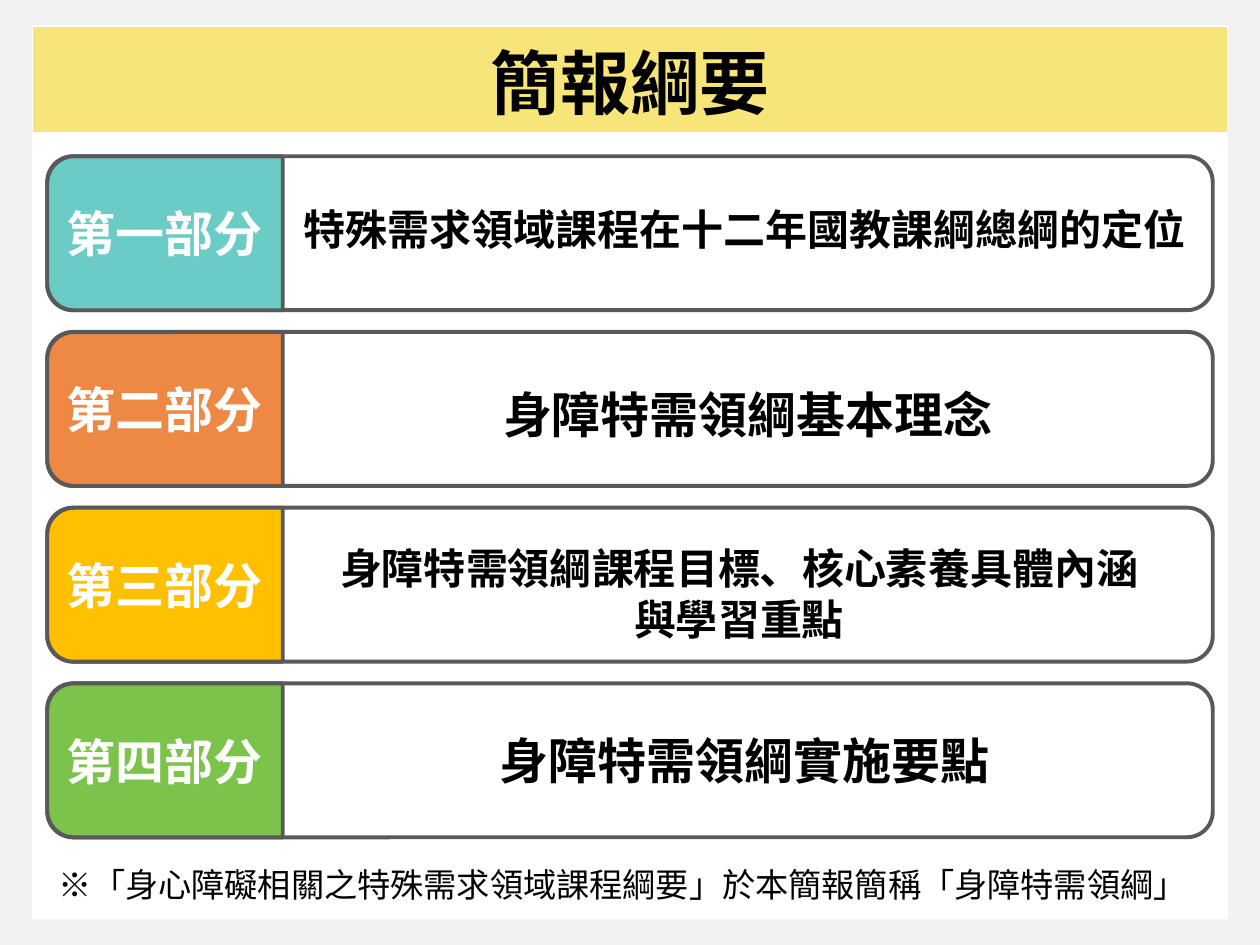
"""Build the briefing outline slide: a title band, four numbered parts and a footnote."""
from dataclasses import dataclass

from lxml import etree
from pptx import Presentation
from pptx.dml.color import RGBColor
from pptx.enum.shapes import MSO_SHAPE
from pptx.enum.text import MSO_ANCHOR, PP_ALIGN
from pptx.oxml.ns import qn
from pptx.util import Pt

ROUNDED = MSO_SHAPE.ROUNDED_RECTANGLE
TAB = MSO_SHAPE.ROUND_2_SAME_RECTANGLE
MIDDLE, TOP = MSO_ANCHOR.MIDDLE, MSO_ANCHOR.TOP
LEFT, CENTER = PP_ALIGN.LEFT, PP_ALIGN.CENTER


@dataclass(frozen=True)
class Theme:
    page: str = "F2F2F2"
    band: str = "F7E579"
    panel: str = "FFFFFF"
    ink: str = "000000"
    label: str = "FFFFFF"
    outline: str = "595959"
    heading_font: str = "Noto Sans CJK SC"
    note_font: str = "Noto Sans CJK TC"
    note_latin: str = "Calibri"
    title_size: int = 40
    large: int = 28
    medium: int = 24
    note_size: int = 19


THEME = Theme()


def add_text(box, lines, size, color, align=CENTER, anchor=TOP, wrap=True):
    left, top, width, height = box
    frame = slide.shapes.add_textbox(Pt(left), Pt(top), Pt(width), Pt(height)).text_frame
    frame.word_wrap = wrap
    frame.vertical_anchor = anchor
    frame.text = "\n".join(lines)
    for paragraph in frame.paragraphs:
        paragraph.alignment = align
        for run in paragraph.runs:
            style_run(run, size, color, THEME.heading_font, THEME.heading_font, True)
    return frame


def style_run(run, size, color, latin, east_asian, bold):
    run.font.size = Pt(size)
    run.font.bold = bold
    run.font.color.rgb = RGBColor.from_string(color)
    run.font.name = latin
    etree.SubElement(run.font._element, qn("a:ea"), typeface=east_asian)


presentation = Presentation()
presentation.slide_width, presentation.slide_height = Pt(720), Pt(540)
slide = presentation.slides.add_slide(presentation.slide_layouts[6])
slide.background.fill.solid()
slide.background.fill.fore_color.rgb = RGBColor.from_string(THEME.page)

backdrop = slide.shapes.add_table(2, 1, Pt(18.7), Pt(15), Pt(682.6), Pt(510)).table
for row, (height, color) in enumerate([(61, THEME.band), (449, THEME.panel)]):
    backdrop.rows[row].height = Pt(height)
    cell = backdrop.cell(row, 0)
    cell.fill.solid()
    cell.fill.fore_color.rgb = RGBColor.from_string(color)

add_text((135.4, 21.6, 449.3, 49.7), ["簡報綱要"], THEME.title_size, THEME.ink, anchor=MIDDLE)

parts = [
    ("第一部分", "6BCBC5", 100, ["特殊需求領域課程在十二年國教課綱總綱的定位"],
     THEME.medium, LEFT, (151.9, 113, 540.7, 36)),
    ("第二部分", "ED7D31", 90, ["身障特需領綱基本理念"],
     THEME.large, CENTER, (162, 216, 530.6, 41)),
    ("第三部分", "FFC000", 100, ["身障特需領綱課程目標、核心素養具體內涵", "與學習重點"],
     THEME.medium, CENTER, (157, 306.7, 530.6, 65.5)),
    ("第四部分", "6DBD37", 90, ["身障特需領綱實施要點"],
     THEME.large, CENTER, (158.4, 414, 534.2, 41)),
]
first_top, row_step, row_height = 89.3, 100.4, 88
row_left, row_width, tab_width = 27, 666, 134.6

for index, (label, color, opacity, topic, size, align, topic_box) in enumerate(parts):
    row_top = first_top + index * row_step
    topic_frame = add_text(topic_box, topic, size, THEME.ink, align)
    if align == LEFT:
        topic_frame.margin_left = Pt(21.6)

    row_frame = slide.shapes.add_shape(
        ROUNDED, Pt(row_left), Pt(row_top), Pt(row_width), Pt(row_height))
    row_frame.fill.background()

    tab = slide.shapes.add_shape(
        TAB, Pt(row_left + (tab_width - row_height) / 2),
        Pt(row_top + (row_height - tab_width) / 2), Pt(row_height), Pt(tab_width))
    tab.rotation = 270
    tab.adjustments[0], tab.adjustments[1] = 0.174, 0
    tab.fill.solid()
    tab.fill.fore_color.rgb = RGBColor.from_string(color)
    if opacity < 100:
        tab_color = tab._element.spPr.find(qn("a:solidFill")).find(qn("a:srgbClr"))
        etree.SubElement(tab_color, qn("a:alpha"), val=str(opacity * 1000))

    for outlined in (row_frame, tab):
        outlined.shadow.inherit = False
        outlined.line.color.rgb = RGBColor.from_string(THEME.outline)
        outlined.line.width = Pt(2.25)

    add_text((31, row_top + 23.7, 127.4, 41), [label], THEME.large, THEME.label, LEFT, wrap=False)

footnote = slide.shapes.add_textbox(Pt(26.6), Pt(490.3), Pt(666.7), Pt(30.2)).text_frame
footnote.word_wrap = False
for text, latin in [
    ("※", THEME.note_font),
    ("「身心障礙相關之特殊需求領域課程綱要」於本簡報簡稱「身障特需領綱」", THEME.note_latin),
]:
    note_run = footnote.paragraphs[0].add_run()
    note_run.text = text
    style_run(note_run, THEME.note_size, THEME.ink, latin, THEME.note_font, False)

presentation.save("out.pptx")
